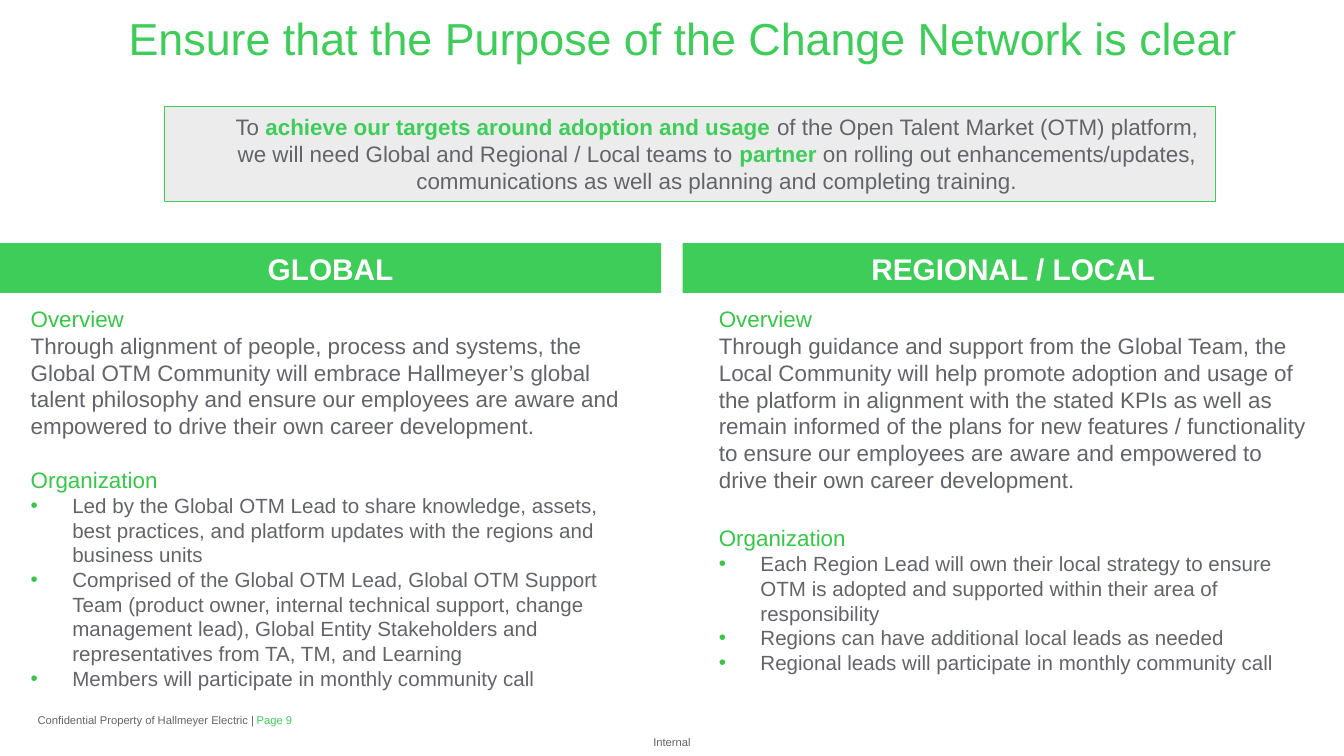
import pptx
import pptx.util
import pptx.dml.color
import pptx.enum.shapes
import pptx.enum.text
import pptx.oxml
import pptx.oxml.ns
from pptx.util import Inches

COLORS = {
    "green": "3DCD58",
    "heading": "36C746",
    "text": "626469",
    "panel": "ECECED",
    "white": "FFFFFF",
}
ALIGN = pptx.enum.text.PP_ALIGN
ANCHOR = pptx.enum.text.MSO_ANCHOR
RECTANGLE = pptx.enum.shapes.MSO_SHAPE.RECTANGLE


def style_font(font, size, color, bold=False):
    font.name = "Arial"
    font.size = pptx.util.Pt(size)
    font.bold = bold
    font.color.rgb = pptx.dml.color.RGBColor.from_string(COLORS[color])


def set_frame(frame, left=0.0, right=0.0, vertical=0.0, anchor=ANCHOR.MIDDLE):
    frame.word_wrap = True
    frame.vertical_anchor = anchor
    frame.margin_left = Inches(left)
    frame.margin_right = Inches(right)
    frame.margin_top = frame.margin_bottom = Inches(vertical)


presentation = pptx.Presentation()
presentation.slide_width = Inches(10)
presentation.slide_height = Inches(10) * 9 // 16
slide = presentation.slides.add_slide(presentation.slide_layouts[5])

title = slide.shapes.title
title.left, title.top = Inches(0.36), Inches(0.08)
title.width, title.height = Inches(9.44), Inches(0.4)
set_frame(title.text_frame, anchor=ANCHOR.TOP)
title.text_frame.auto_size = pptx.enum.text.MSO_AUTO_SIZE.NONE
title.text_frame.text = "Ensure that the Purpose of the Change Network is clear"
paragraph = title.text_frame.paragraphs[0]
paragraph.alignment = ALIGN.CENTER
style_font(paragraph.font, 24, "green")

footers = [
    ("Internal", 4.75, 5.42, 0.5, 0.2, "text", ALIGN.CENTER),
    ("Page 9", 1.91, 5.31, 0.57, 0.1, "green", ALIGN.LEFT),
    ("Confidential Property of Hallmeyer Electric |", 0.28, 5.31, 1.65, 0.1, "text", ALIGN.LEFT),
]
for text, left, top, width, height, color, alignment in footers:
    footer = slide.shapes.add_textbox(Inches(left), Inches(top), Inches(width), Inches(height))
    set_frame(footer.text_frame)
    footer.text_frame.text = text
    paragraph = footer.text_frame.paragraphs[0]
    paragraph.alignment = alignment
    style_font(paragraph.font, 6, color)

columns = [
    {
        "header": "GLOBAL",
        "header_left": 0,
        "text_left": 0.13,
        "height": 3,
        "gap": 14.4,
        "overview": "Through alignment of people, process and systems, the Global OTM Community "
                    "will embrace Hallmeyer’s global talent philosophy and ensure our employees "
                    "are aware and empowered to drive their own career development.",
        "organization": [
            "Led by the Global OTM Lead to share knowledge, assets, best practices, and "
            "platform updates with the regions and business units",
            "Comprised of the Global OTM Lead, Global OTM Support Team (product owner, "
            "internal technical support, change management lead), Global Entity "
            "Stakeholders and representatives from TA, TM, and Learning",
            "Members will participate in monthly community call",
        ],
    },
    {
        "header": "REGIONAL / LOCAL",
        "header_left": 5.08,
        "text_left": 5.25,
        "height": 2.88,
        "gap": 16.8,
        "overview": "Through guidance and support from the Global Team, the Local Community will "
                    "help promote adoption and usage of the platform in alignment with the "
                    "stated KPIs as well as remain informed of the plans for new features / "
                    "functionality to ensure our employees are aware and empowered to drive "
                    "their own career development.",
        "organization": [
            "Each Region Lead will own their local strategy to ensure OTM is adopted and "
            "supported within their area of responsibility",
            "Regions can have additional local leads as needed",
            "Regional leads will participate in monthly community call",
        ],
    },
]
for column in columns:
    header = slide.shapes.add_shape(
        RECTANGLE, Inches(column["header_left"]), Inches(1.81), Inches(4.92), Inches(0.37))
    header.shadow.inherit = False
    header.fill.solid()
    header.fill.fore_color.rgb = pptx.dml.color.RGBColor.from_string(COLORS["green"])
    header.line.fill.background()
    set_frame(header.text_frame, 0.1, 0.1, 0.05)
    header.text_frame.text = column["header"]
    paragraph = header.text_frame.paragraphs[0]
    paragraph.alignment = ALIGN.CENTER
    style_font(paragraph.font, 16, "white", True)

    body = slide.shapes.add_textbox(
        Inches(column["text_left"]), Inches(2.22), Inches(4.61), Inches(column["height"]))
    set_frame(body.text_frame, 0.1, 0.1, 0.05, ANCHOR.TOP)
    lines = ["Overview", column["overview"], "Organization"] + column["organization"]
    body.text_frame.text = "\n".join(lines)
    for index, paragraph in enumerate(body.text_frame.paragraphs):
        is_heading = index in (0, 2)
        is_bullet = index > 2
        if is_bullet:
            properties = paragraph._p.get_or_add_pPr()
            properties.set("marL", str(Inches(0.31)))
            properties.set("indent", str(-Inches(0.31)))
            namespace = pptx.oxml.ns.nsdecls("a")
            for xml in (
                f'<a:buClr {namespace}><a:srgbClr val="{COLORS["heading"]}"/></a:buClr>',
                f'<a:buFont {namespace} typeface="Arial"/>',
                f'<a:buChar {namespace} char="•"/>',
            ):
                properties.append(pptx.oxml.parse_xml(xml))
        if index == 2:
            paragraph.space_before = pptx.util.Pt(column["gap"])
        style_font(paragraph.font, 11 if is_bullet else 12, "heading" if is_heading else "text")

purpose = slide.shapes.add_shape(RECTANGLE, Inches(1.22), Inches(0.79), Inches(7.82), Inches(0.71))
purpose.shadow.inherit = False
purpose.fill.solid()
purpose.fill.fore_color.rgb = pptx.dml.color.RGBColor.from_string(COLORS["panel"])
purpose.line.color.rgb = pptx.dml.color.RGBColor.from_string(COLORS["green"])
purpose.line.width = pptx.util.Pt(0.25)
set_frame(purpose.text_frame, 0.47, 0.06, 0.06)
paragraph = purpose.text_frame.paragraphs[0]
paragraph.alignment = ALIGN.CENTER
purpose_runs = [
    ("To ", False),
    ("achieve our targets around adoption and usage ", True),
    ("of the Open Talent Market (OTM) platform, we will need Global and Regional / Local teams to ", False),
    ("partner", True),
    (" on rolling out enhancements/updates, communications as well as planning and completing training.", False),
]
for text, emphasized in purpose_runs:
    run = paragraph.add_run()
    run.text = text
    style_font(run.font, 12, "green" if emphasized else "text", emphasized)

presentation.save("out.pptx")
